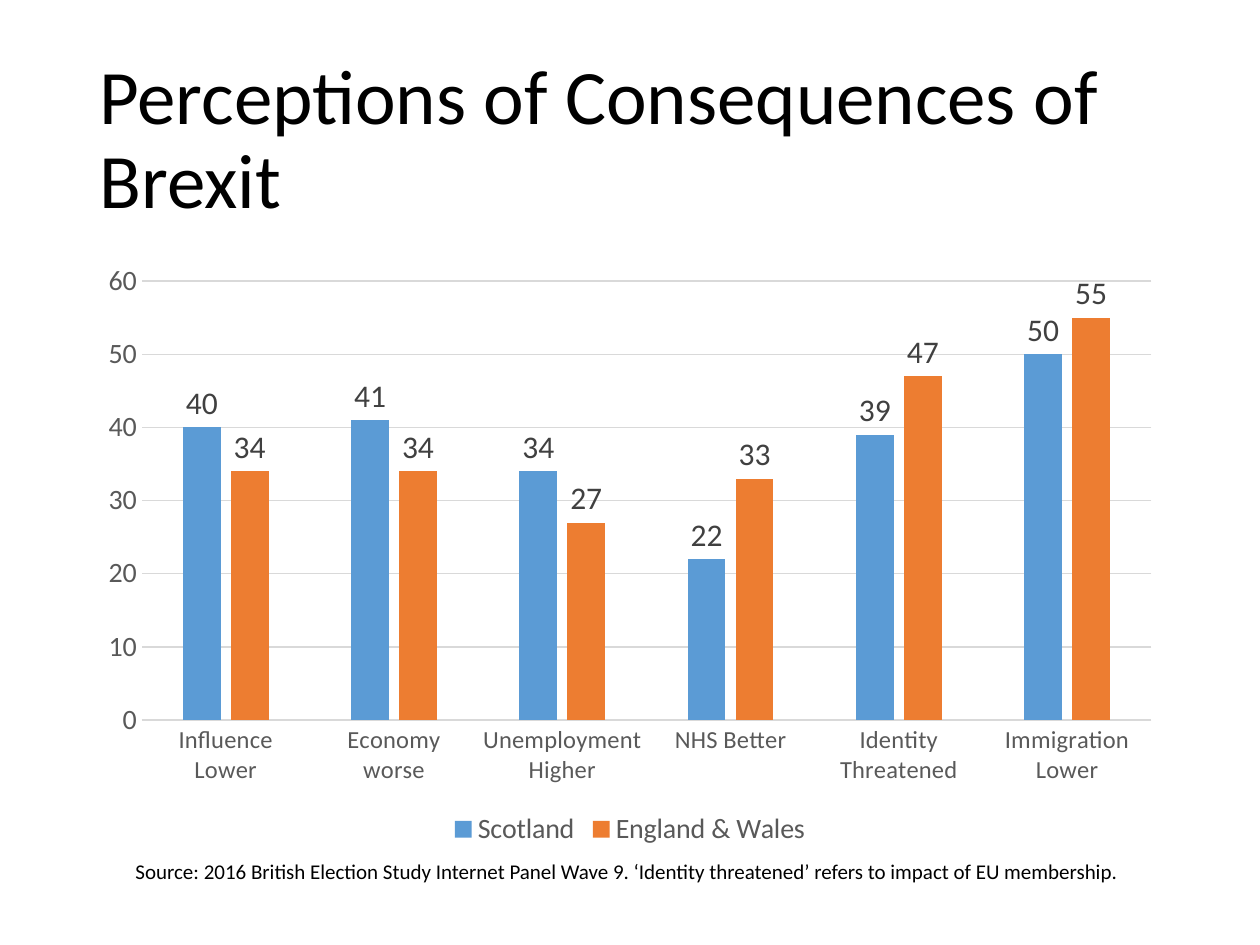
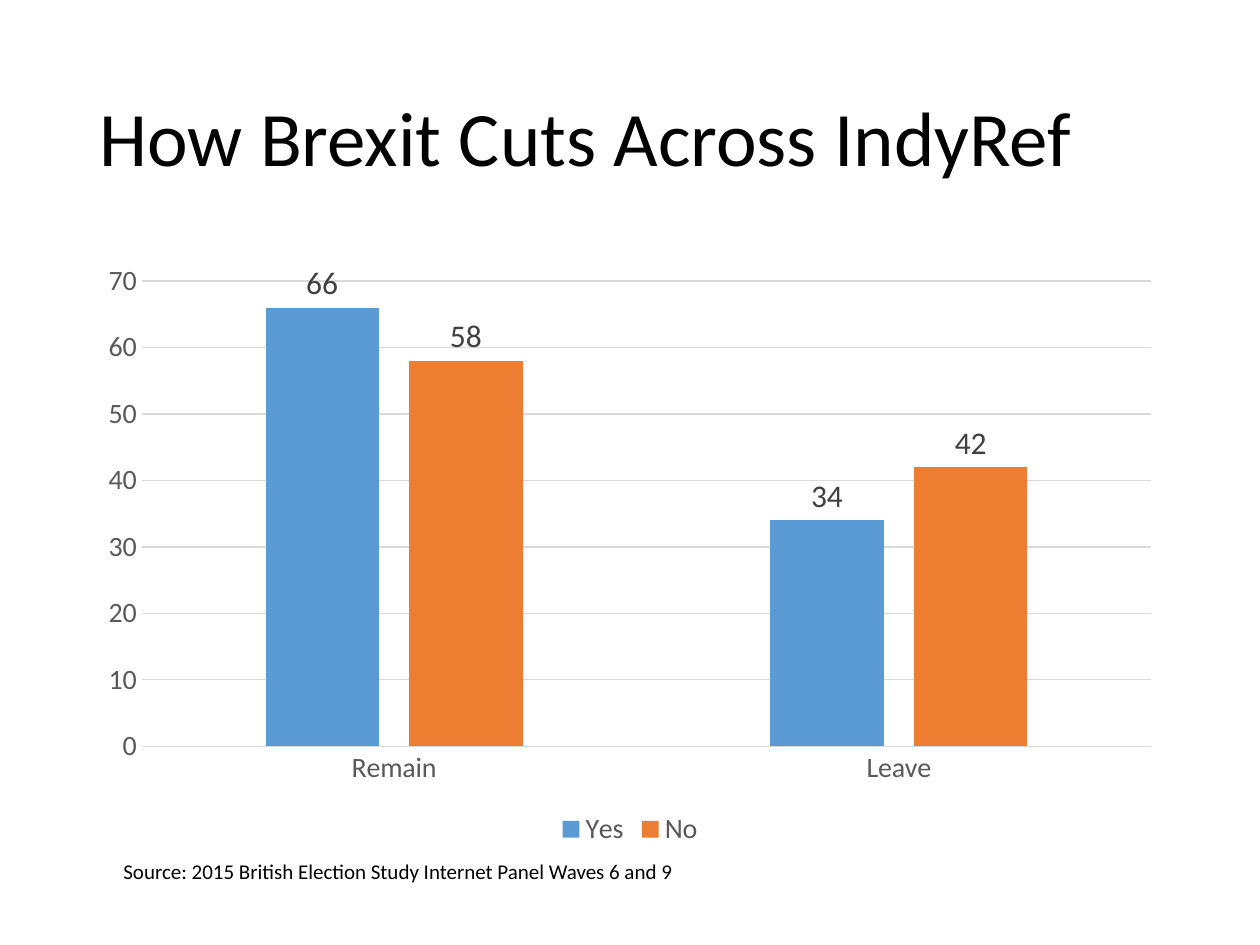
import pptx
import pptx.chart.data
import pptx.dml.color
import pptx.enum.chart
import pptx.enum.text
import pptx.util
from dataclasses import dataclass


@dataclass(frozen=True)
class Theme:
    font: str = "Calibri"
    ink: str = "000000"
    axis_text: str = "595959"
    label_text: str = "404040"
    grid: str = "D9D9D9"
    series: tuple = ("5B9BD5", "ED7D31")
    title_size: int = 44
    label_size: int = 18
    axis_size: int = 16
    small_axis_size: int = 14
    source_size: int = 12


THEME = Theme()
PX_PER_INCH = 126
TITLE_BOX = (87, 50, 1086, 183)
CHART_BOX = (87, 252, 1086, 600)

SLIDES = [
    dict(
        title="Perceptions of Consequences of Brexit",
        categories=["Influence Lower", "Economy worse", "Unemployment Higher",
                    "NHS Better", "Identity Threatened", "Immigration Lower"],
        series={"Scotland": (40, 41, 34, 22, 39, 50),
                "England & Wales": (34, 34, 27, 33, 47, 55)},
        category_size=THEME.small_axis_size,
        source="Source: 2016 British Election Study Internet Panel Wave 9. "
               "‘Identity threatened’ refers to impact of EU membership.",
        source_box=(123, 852, 1017, 38),
    ),
    dict(
        title="How Brexit Cuts Across IndyRef",
        categories=["Remain", "Leave"],
        series={"Yes": (66, 34), "No": (58, 42)},
        category_size=THEME.axis_size,
        source="Source: 2015 British Election Study Internet Panel Waves 6 and 9",
        source_box=(111, 852, 907, 38),
    ),
]


def px(n):
    return pptx.util.Emu(round(n * 914400 / PX_PER_INCH))


def rgb(color):
    return pptx.dml.color.RGBColor.from_string(color)


def style_font(font, size, color):
    font.name = THEME.font
    font.size = pptx.util.Pt(size)
    font.bold = False
    font.color.rgb = rgb(color)


def style_line(line, color):
    line.color.rgb = rgb(color)
    line.width = pptx.util.Pt(0.75)


def add_text(slide, box, text, size):
    tf = slide.shapes.add_textbox(*map(px, box)).text_frame
    tf.word_wrap = True
    p = tf.paragraphs[0]
    p.text = text
    style_font(p.font, size, THEME.ink)
    return tf


def add_title(slide, box, text):
    tf = add_text(slide, box, text, THEME.title_size)
    tf.vertical_anchor = pptx.enum.text.MSO_ANCHOR.MIDDLE
    tf.paragraphs[0].line_spacing = 0.9


def add_source(slide, box, text):
    tf = add_text(slide, box, text, THEME.source_size)
    tf.auto_size = pptx.enum.text.MSO_AUTO_SIZE.SHAPE_TO_FIT_TEXT


def style_axes(chart, category_size):
    for axis, size in ((chart.category_axis, category_size),
                       (chart.value_axis, THEME.axis_size)):
        axis.major_tick_mark = pptx.enum.chart.XL_TICK_MARK.NONE
        axis.minor_tick_mark = pptx.enum.chart.XL_TICK_MARK.NONE
        style_font(axis.tick_labels.font, size, THEME.axis_text)
    style_line(chart.category_axis.format.line, THEME.grid)
    chart.value_axis.format.line.fill.background()
    style_line(chart.value_axis.major_gridlines.format.line, THEME.grid)


def style_series(plot):
    plot.gap_width = 219
    plot.overlap = -27
    plot.vary_by_categories = False
    for series, color in zip(plot.series, THEME.series):
        series.format.fill.solid()
        series.format.fill.fore_color.rgb = rgb(color)
        labels = series.data_labels
        labels.show_value = True
        labels.position = pptx.enum.chart.XL_LABEL_POSITION.OUTSIDE_END
        style_font(labels.font, THEME.label_size, THEME.label_text)


def add_column_chart(slide, box, categories, series, category_size):
    data = pptx.chart.data.CategoryChartData()
    data.categories = categories
    for name, values in series.items():
        data.add_series(name, values)
    chart = slide.shapes.add_chart(
        pptx.enum.chart.XL_CHART_TYPE.COLUMN_CLUSTERED, *map(px, box), data).chart
    chart.has_title = False
    style_font(chart.font, THEME.axis_size, THEME.axis_text)
    style_axes(chart, category_size)
    style_series(chart.plots[0])
    chart.has_legend = True
    chart.legend.position = pptx.enum.chart.XL_LEGEND_POSITION.BOTTOM
    chart.legend.include_in_layout = False
    style_font(chart.legend.font, THEME.axis_size, THEME.axis_text)


def add_chart_slide(prs, title, categories, series, category_size, source, source_box):
    slide = prs.slides.add_slide(prs.slide_layouts[6])
    add_title(slide, TITLE_BOX, title)
    add_column_chart(slide, CHART_BOX, categories, series, category_size)
    add_source(slide, source_box, source)


def main():
    prs = pptx.Presentation()
    prs.slide_width = px(1260)
    prs.slide_height = px(945)
    for content in SLIDES:
        add_chart_slide(prs, **content)
    prs.save("out.pptx")


if __name__ == "__main__":
    main()
